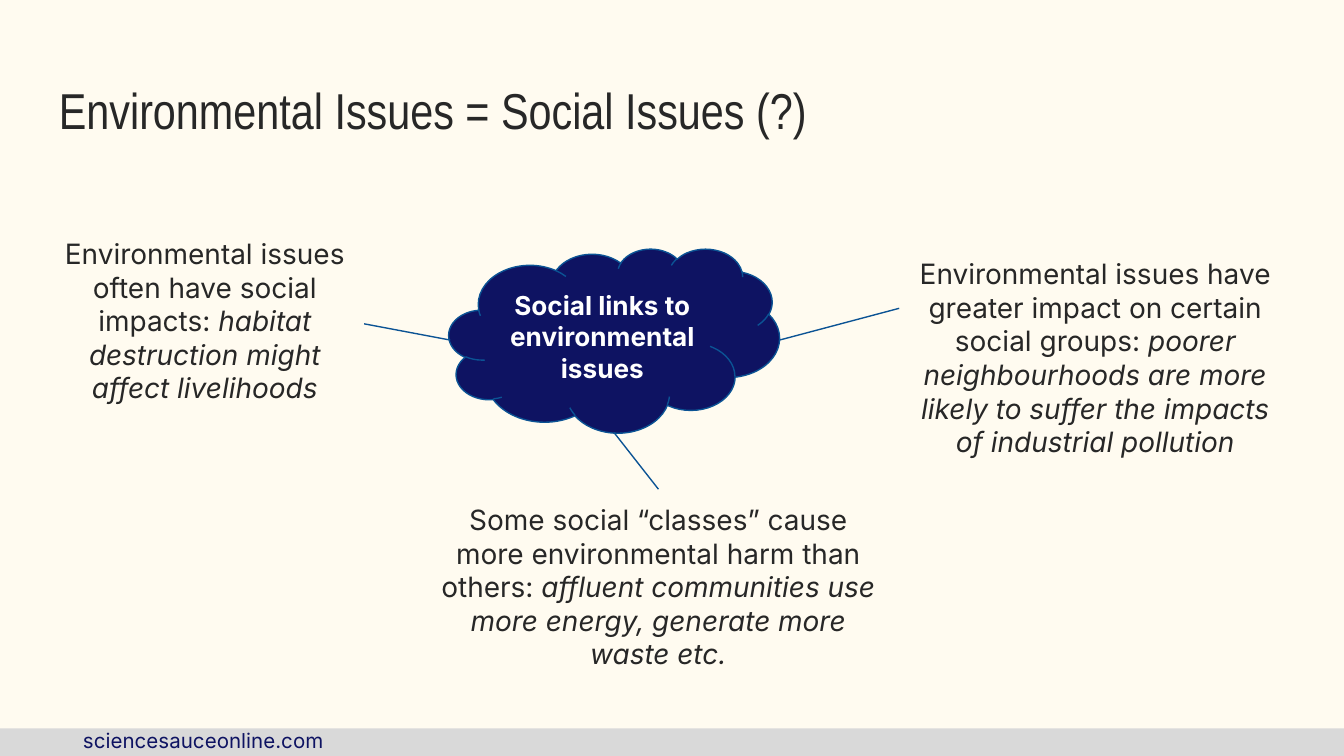
"""Build a slide linking social and environmental issues around a central cloud."""
from typing import NamedTuple

from lxml import etree
from pptx import Presentation
from pptx.dml.color import RGBColor
from pptx.enum.shapes import MSO_CONNECTOR, MSO_SHAPE
from pptx.enum.text import MSO_ANCHOR, PP_ALIGN
from pptx.oxml.ns import qn
from pptx.util import Pt

STRAIGHT = MSO_CONNECTOR.STRAIGHT
RECTANGLE, CLOUD = MSO_SHAPE.RECTANGLE, MSO_SHAPE.CLOUD
LEFT, CENTER = PP_ALIGN.LEFT, PP_ALIGN.CENTER
TOP, MIDDLE = MSO_ANCHOR.TOP, MSO_ANCHOR.MIDDLE

CREAM, GREY, INK = "FFFBF0", "D9D9D9", "272727"
NAVY, BLUE, WHITE = "0E1362", "0B5394", "FFFFFF"
INTER, NARROW = "Inter", "Arial Narrow"
INSET, LINE_WIDTH = 7.2, 0.75


class Box(NamedTuple):
    """Position and size in points."""

    left: float
    top: float
    width: float
    height: float


class Style(NamedTuple):
    """Look of a text."""

    size: float
    color: str
    font: str = INTER
    align: PP_ALIGN = LEFT
    bold: bool = False


class Idea(NamedTuple):
    """An idea with its example, and the line joining it to the cloud."""

    box: Box
    claim: str
    example: str
    start: tuple[float, float]
    side: int


BODY = Style(15, INK, align=CENTER)
IDEAS = [
    Idea(Box(481.7, 130.3, 210.2, 69.8),
         "Environmental issues have greater impact on certain social groups: ",
         "poorer neighbourhoods are more likely to suffer the impacts of industrial pollution",
         (417.6, 182.2), 1),
    Idea(Box(224.6, 262.1, 256.3, 89.3),
         "Some social “classes” cause more environmental harm than others: ",
         "affluent communities use more energy, generate more waste etc.",
         (329, 231.8), 0),
    Idea(Box(24.5, 119.5, 170.6, 108),
         "Environmental issues often have social impacts: ",
         "habitat destruction might affect livelihoods",
         (241.2, 182.2), 3),
]


def rgb(color: str) -> RGBColor:
    """Turn a hex string into a colour."""
    return RGBColor.from_string(color)


def write(sp, text: str, style: Style, anchor=TOP, italic_text: str = "") -> None:
    """Fill a shape with one paragraph that may end in italics."""
    tf = sp.text_frame
    tf.word_wrap = True
    tf.vertical_anchor = anchor
    tf.margin_left = tf.margin_right = tf.margin_top = tf.margin_bottom = Pt(INSET)
    p = tf.paragraphs[0]
    p.alignment = style.align
    p.font.name, p.font.size, p.font.bold = style.font, Pt(style.size), style.bold
    p.font.color.rgb = rgb(style.color)
    p.add_run().text = text
    if italic_text:
        r = p.add_run()
        r.text = italic_text
        r.font.italic = True


def add_text(s, box: Box, text: str, style: Style, italic_text: str = ""):
    """Add a text box."""
    sp = s.shapes.add_textbox(*map(Pt, box))
    write(sp, text, style, italic_text=italic_text)
    return sp


def add_filled(s, kind: MSO_SHAPE, box: Box, fill: str, line: str = ""):
    """Add a filled shape, outlined when a line colour is given."""
    sp = s.shapes.add_shape(kind, *map(Pt, box))
    sp.shadow.inherit = False
    sp.fill.solid()
    sp.fill.fore_color.rgb = rgb(fill)
    if line:
        sp.line.color.rgb = rgb(line)
        sp.line.width = Pt(LINE_WIDTH)
    else:
        sp.line.fill.background()
    return sp


def add_idea(s, idea: Idea) -> None:
    """Add an idea's text and its line from the cloud."""
    sp = add_text(s, idea.box, idea.claim, BODY, idea.example)
    x, y = map(Pt, idea.start)
    line = s.shapes.add_connector(STRAIGHT, x, y, x, y)
    line.end_connect(sp, idea.side)
    line.line.color.rgb = rgb(BLUE)
    line.line.width = Pt(LINE_WIDTH)
    etree.SubElement(line._element.spPr, qn("a:effectLst"))


def main() -> None:
    """Build and save the slide."""
    prs = Presentation()
    prs.slide_width, prs.slide_height = Pt(720), Pt(405)
    s = prs.slides.add_slide(prs.slide_layouts[6])
    s.background.fill.solid()
    s.background.fill.fore_color.rgb = rgb(CREAM)

    add_filled(s, RECTANGLE, Box(0, 390.2, 720, 14.8), GREY)
    add_text(s, Box(37.4, 383.8, 240.5, 13), "sciencesauceonline.com", Style(11, NAVY))
    add_text(s, Box(24.5, 35.3, 671, 48.2), "Environmental Issues = Social Issues (?)",
             Style(27, INK, NARROW))
    cloud = add_filled(s, CLOUD, Box(240.5, 133.2, 177.1, 98.6), NAVY, BLUE)
    write(cloud, "Social links to environmental issues",
          Style(14, WHITE, align=CENTER, bold=True), MIDDLE)
    for idea in IDEAS:
        add_idea(s, idea)
    prs.save("out.pptx")


if __name__ == "__main__":
    main()
